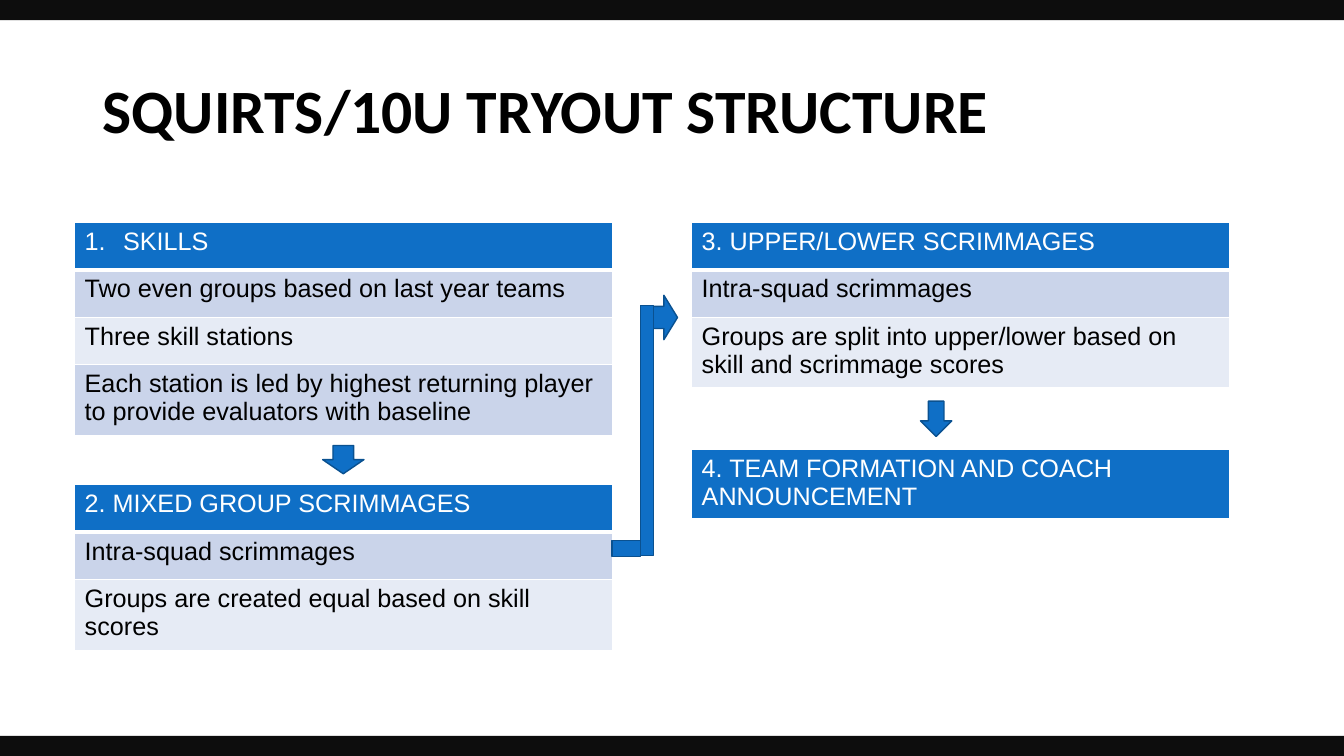
from dataclasses import dataclass

from lxml.etree import SubElement
from pptx import Presentation
from pptx.dml.color import RGBColor
from pptx.enum.shapes import MSO_SHAPE
from pptx.enum.text import MSO_ANCHOR
from pptx.oxml.ns import qn
from pptx.util import Inches, Pt


@dataclass(frozen=True)
class Theme:
    blue: str = "0F6FC6"
    outline: str = "0A5190"
    bands: tuple = ("CAD4EA", "E6EBF5")
    bar: str = "0D0D0D"
    white: str = "FFFFFF"
    black: str = "000000"
    title_font: str = "Calibri"
    body_font: str = "Arial"
    title_size: int = 44
    body_size: int = 18


THEME = Theme()
SLIDE_WIDTH, SLIDE_HEIGHT = 13.33, 7.5
STAGE_WIDTH, ROW_HEIGHT = 5.34, 0.47
LEFT_COLUMN, RIGHT_COLUMN = 0.74, 6.86
TOP_ROW = 2.21
BAR_HEIGHT = 0.2

# Each stage: left, top, heading, details, whether the heading is auto-numbered
STAGES = [
    (LEFT_COLUMN, TOP_ROW, "SKILLS", [
        "Two even groups based on last year teams",
        "Three skill stations",
        "Each station is led by highest returning player to provide evaluators with baseline",
    ], True),
    (LEFT_COLUMN, 4.81, "2. MIXED GROUP SCRIMMAGES", [
        "Intra-squad scrimmages",
        "Groups are created equal based on skill scores",
    ], False),
    (RIGHT_COLUMN, TOP_ROW, "3. UPPER/LOWER SCRIMMAGES", [
        "Intra-squad scrimmages",
        "Groups are split into upper/lower based on skill and scrimmage scores",
    ], False),
    (RIGHT_COLUMN, 4.46, "4. TEAM FORMATION AND COACH ANNOUNCEMENT", [], False),
]

# Flow from stage to stage, back to front
FLOW = [
    (MSO_SHAPE.DOWN_ARROW, 3.2, 4.42, 0.41, 0.28),
    (MSO_SHAPE.RIGHT_ARROW, 6.45, 2.93, 0.27, 0.44),
    (MSO_SHAPE.RECTANGLE, 6.35, 3.03, 0.13, 2.48),
    (MSO_SHAPE.RECTANGLE, 6.07, 5.36, 0.28, 0.16),
    (MSO_SHAPE.DOWN_ARROW, 9.13, 3.98, 0.31, 0.35),
]


def rgb(color):
    return RGBColor.from_string(color)


def write(frame, text, color=THEME.black, size=THEME.body_size,
          font=THEME.body_font, bold=False, spacing=None):
    frame.word_wrap = True
    paragraph = frame.paragraphs[0]
    paragraph.line_spacing = spacing
    run = paragraph.add_run()
    run.text = text
    run.font.name = font
    run.font.size = Pt(size)
    run.font.bold = bold
    run.font.color.rgb = rgb(color)
    return paragraph


def add_number(paragraph):
    properties = paragraph._p.get_or_add_pPr()
    properties.set("marL", str(Inches(0.38)))
    properties.set("indent", str(Inches(-0.38)))
    bullet_color = SubElement(properties, qn("a:buClr"))
    SubElement(bullet_color, qn("a:srgbClr"), val=THEME.white)
    SubElement(properties, qn("a:buFont"), typeface="+mj-lt")
    SubElement(properties, qn("a:buAutoNum"), type="arabicPeriod")


def add_borders(cell, top=1, bottom=1):
    properties = cell._tc.get_or_add_tcPr()
    for side, width in (("L", 1), ("R", 1), ("T", top), ("B", bottom)):
        border = SubElement(properties, qn(f"a:ln{side}"), w=str(Pt(width)))
        fill = SubElement(border, qn("a:solidFill"))
        SubElement(fill, qn("a:srgbClr"), val=THEME.white)


def add_stage(slide, left, top, heading, details, numbered):
    lines = [heading, *details]
    table = slide.shapes.add_table(
        len(lines), 1, Inches(left), Inches(top),
        Inches(STAGE_WIDTH), Inches(ROW_HEIGHT * len(lines))).table
    table.horz_banding = False
    table.first_row = False
    for index, line in enumerate(lines):
        is_heading = index == 0
        table.rows[index].height = Inches(ROW_HEIGHT)
        cell = table.cell(index, 0)
        # Borders come before the fill in the cell properties
        add_borders(cell, top=3 if index == 1 else 1, bottom=3 if is_heading else 1)
        cell.fill.solid()
        cell.fill.fore_color.rgb = rgb(
            THEME.blue if is_heading else THEME.bands[(index - 1) % 2])
        paragraph = write(cell.text_frame, line,
                          color=THEME.white if is_heading else THEME.black)
        if is_heading and numbered:
            add_number(paragraph)


def add_block(slide, kind, left, top, width, height, fill=THEME.blue, outline=None):
    block = slide.shapes.add_shape(
        kind, Inches(left), Inches(top), Inches(width), Inches(height))
    block.shadow.inherit = False
    block.fill.solid()
    block.fill.fore_color.rgb = rgb(fill)
    if outline:
        block.line.color.rgb = rgb(outline)
        block.line.width = Pt(1)
    else:
        block.line.fill.background()


def add_title(slide, text):
    title = slide.shapes.add_textbox(
        Inches(0.92), Inches(0.4), Inches(11.5), Inches(1.45))
    title.text_frame.vertical_anchor = MSO_ANCHOR.MIDDLE
    write(title.text_frame, text, size=THEME.title_size,
          font=THEME.title_font, bold=True, spacing=0.9)


def main():
    deck = Presentation()
    deck.slide_width = Inches(SLIDE_WIDTH)
    deck.slide_height = Inches(SLIDE_HEIGHT)
    slide = deck.slides.add_slide(deck.slide_layouts[6])

    add_title(slide, "SQUIRTS/10U TRYOUT STRUCTURE")

    # Tryout stages
    for stage in STAGES:
        add_stage(slide, *stage)

    # Arrows between the stages
    for step in FLOW:
        add_block(slide, *step, outline=THEME.outline)

    # Bars along the top and bottom edges
    for top in (0, SLIDE_HEIGHT - BAR_HEIGHT):
        add_block(slide, MSO_SHAPE.RECTANGLE, 0, top, SLIDE_WIDTH, BAR_HEIGHT,
                  fill=THEME.bar)

    deck.save("out.pptx")


if __name__ == "__main__":
    main()
